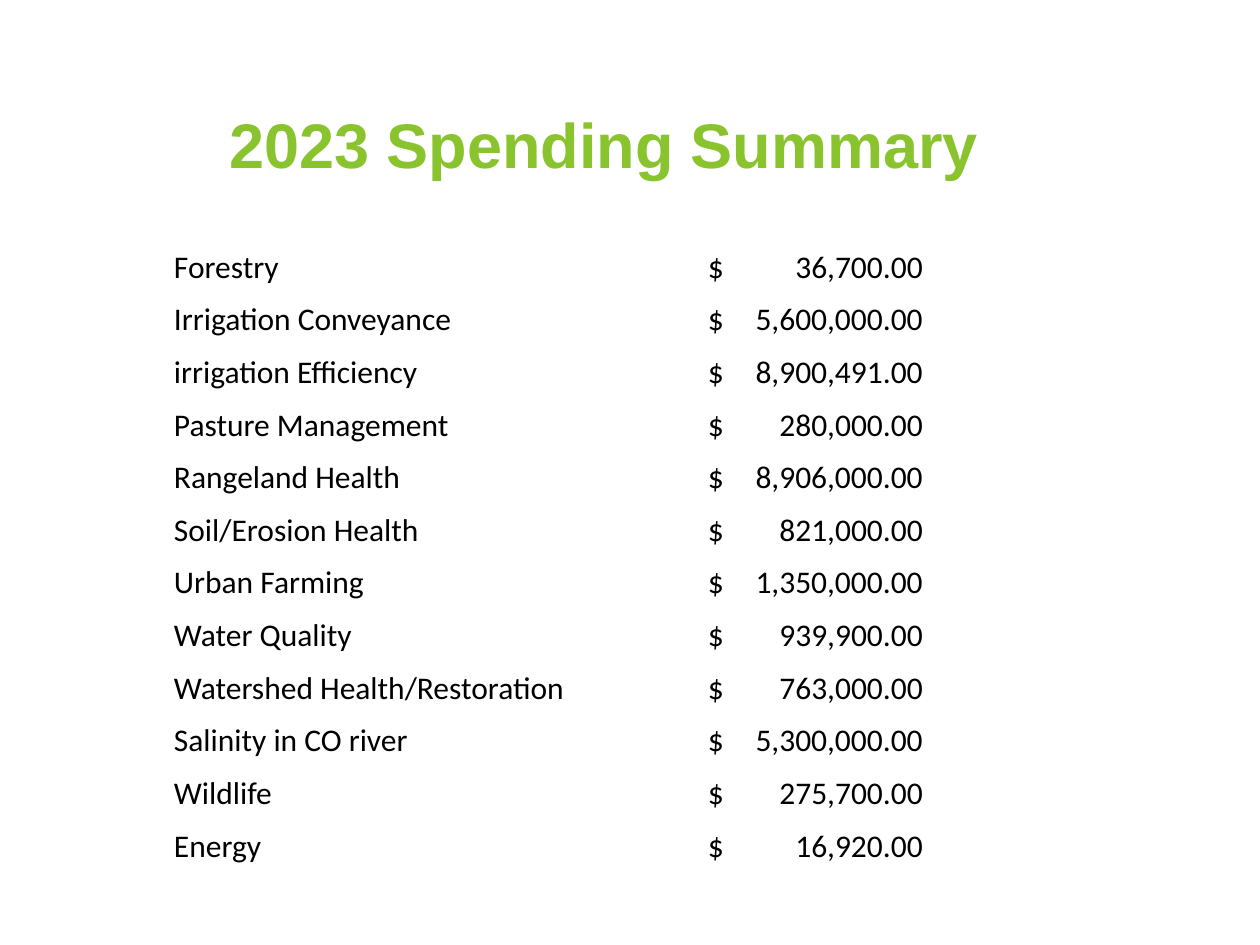
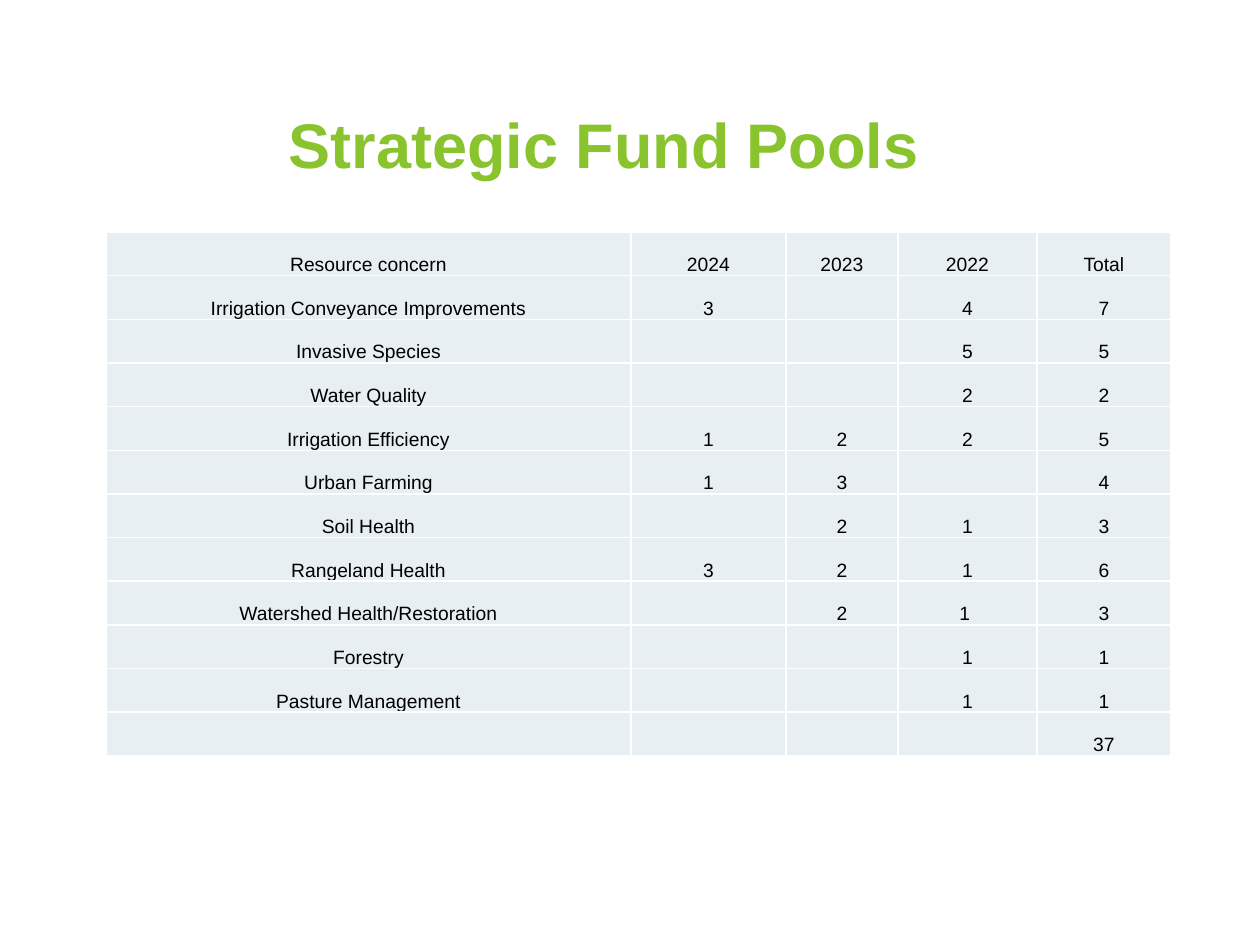
from dataclasses import dataclass

from lxml.etree import SubElement
from pptx import Presentation
from pptx.dml.color import RGBColor
from pptx.enum.text import MSO_ANCHOR as Anchor, PP_ALIGN as Align
from pptx.oxml.ns import qn
from pptx.util import Pt

PX = 914400 / 126


@dataclass(frozen=True)
class Theme:
    title_color: RGBColor = RGBColor(0x89, 0xC3, 0x2D)
    text_color: RGBColor = RGBColor(0, 0, 0)
    cell_color: RGBColor = RGBColor(0xE7, 0xEF, 0xF2)
    border_color: str = "FFFFFF"
    title_font: str = "Arial"
    spending_font: str = "Calibri"
    pools_font: str = "Arial"
    title_size: int = 36
    spending_size: int = 18
    pools_size: int = 11


THEME = Theme()
AMOUNT_INSET = 7
AMOUNT_TAB = 215

SPENDING = [
    ("Forestry", "36,700.00"),
    ("Irrigation Conveyance", "5,600,000.00"),
    ("irrigation Efficiency", "8,900,491.00"),
    ("Pasture Management", "280,000.00"),
    ("Rangeland Health", "8,906,000.00"),
    ("Soil/Erosion Health", "821,000.00"),
    ("Urban Farming", "1,350,000.00"),
    ("Water Quality", "939,900.00"),
    ("Watershed Health/Restoration", "763,000.00"),
    ("Salinity in CO river", "5,300,000.00"),
    ("Wildlife", "275,700.00"),
    ("Energy", "16,920.00"),
]

FUND_POOLS = [
    ("Resource concern", "2024", "2023", "2022", "Total"),
    ("Irrigation Conveyance Improvements", "3", "", "4", "7"),
    ("Invasive Species", "", "", "5", "5"),
    ("Water Quality", "", "", "2", "2"),
    ("Irrigation Efficiency", "1", "2", "2", "5"),
    ("Urban Farming", "1", "3", "", "4"),
    ("Soil Health", "", "2", "1", "3"),
    ("Rangeland Health", "3", "2", "1", "6"),
    ("Watershed Health/Restoration", "", "2", "1 ", "3"),
    ("Forestry", "", "", "1", "1"),
    ("Pasture Management", "", "", "1", "1"),
    ("", "", "", "", "37"),
]


def px(length):
    return round(length * PX)


def add_table_page(title, rows, left, top, widths, height, font_values, align):
    """Add a titled slide with a plain table and return the table."""
    page = deck.slides.add_slide(deck.slide_layouts[5])
    box = page.shapes.title
    box.left, box.top, box.width, box.height = px(37), px(78), px(1134), px(130)
    box.text_frame.vertical_anchor = Anchor.MIDDLE
    para = box.text_frame.paragraphs[0]
    para.alignment = Align.CENTER
    span = para.add_run()
    span.text = title
    title_values = {"name": THEME.title_font, "size": Pt(THEME.title_size), "bold": True}
    for name, value in title_values.items():
        setattr(span.font, name, value)
    span.font.color.rgb = THEME.title_color

    table = page.shapes.add_table(
        len(rows), len(widths), px(left), px(top), px(sum(widths)), px(height)
    ).table
    table.first_row = table.horz_banding = False
    for column, width in zip(table.columns, widths):
        column.width = px(width)
    cell_values = {
        "margin_left": px(1), "margin_right": px(1), "margin_top": px(1),
        "margin_bottom": 0, "vertical_anchor": Anchor.BOTTOM,
    }
    for row, texts in zip(table.rows, rows):
        row.height = px(height / len(rows))
        for cell, text in zip(row.cells, texts):
            for name, value in cell_values.items():
                setattr(cell, name, value)
            para = cell.text_frame.paragraphs[0]
            para.alignment = align
            if text:
                span = para.add_run()
                span.text = text
                for name, value in font_values.items():
                    setattr(span.font, name, value)
                span.font.color.rgb = THEME.text_color
    return table


deck = Presentation()
deck.slide_width, deck.slide_height = px(1260), px(945)

# Spending: dollar signs on the left, amounts against a right tab
spending = add_table_page(
    "2023 Spending Summary",
    [(concern, f"$\t{amount}") for concern, amount in SPENDING],
    173, 234, (528, 243), 632,
    {"name": THEME.spending_font, "size": Pt(THEME.spending_size)}, Align.LEFT,
)
for cell in spending.iter_cells():
    cell.fill.background()
for row in spending.rows:
    amount_cell = row.cells[1]
    amount_cell.margin_left = px(AMOUNT_INSET)
    properties = amount_cell.text_frame.paragraphs[0]._p.get_or_add_pPr()
    tabs = SubElement(properties, qn("a:tabLst"))
    SubElement(tabs, qn("a:tab"), pos=str(px(AMOUNT_TAB)), algn="r")

# Fund pools: tinted cells with white rules
pools = add_table_page(
    "Strategic Fund Pools", FUND_POOLS,
    106, 232, (525, 155, 112, 139, 134), 524,
    {"name": THEME.pools_font, "size": Pt(THEME.pools_size)}, Align.CENTER,
)
for cell in pools.iter_cells():
    properties = cell._tc.get_or_add_tcPr()
    for side in ("lnL", "lnR", "lnT", "lnB"):
        line = SubElement(properties, qn(f"a:{side}"), w=str(Pt(1)))
        paint = SubElement(line, qn("a:solidFill"))
        SubElement(paint, qn("a:srgbClr"), val=THEME.border_color)
    cell.fill.solid()
    cell.fill.fore_color.rgb = THEME.cell_color

deck.save("out.pptx")
